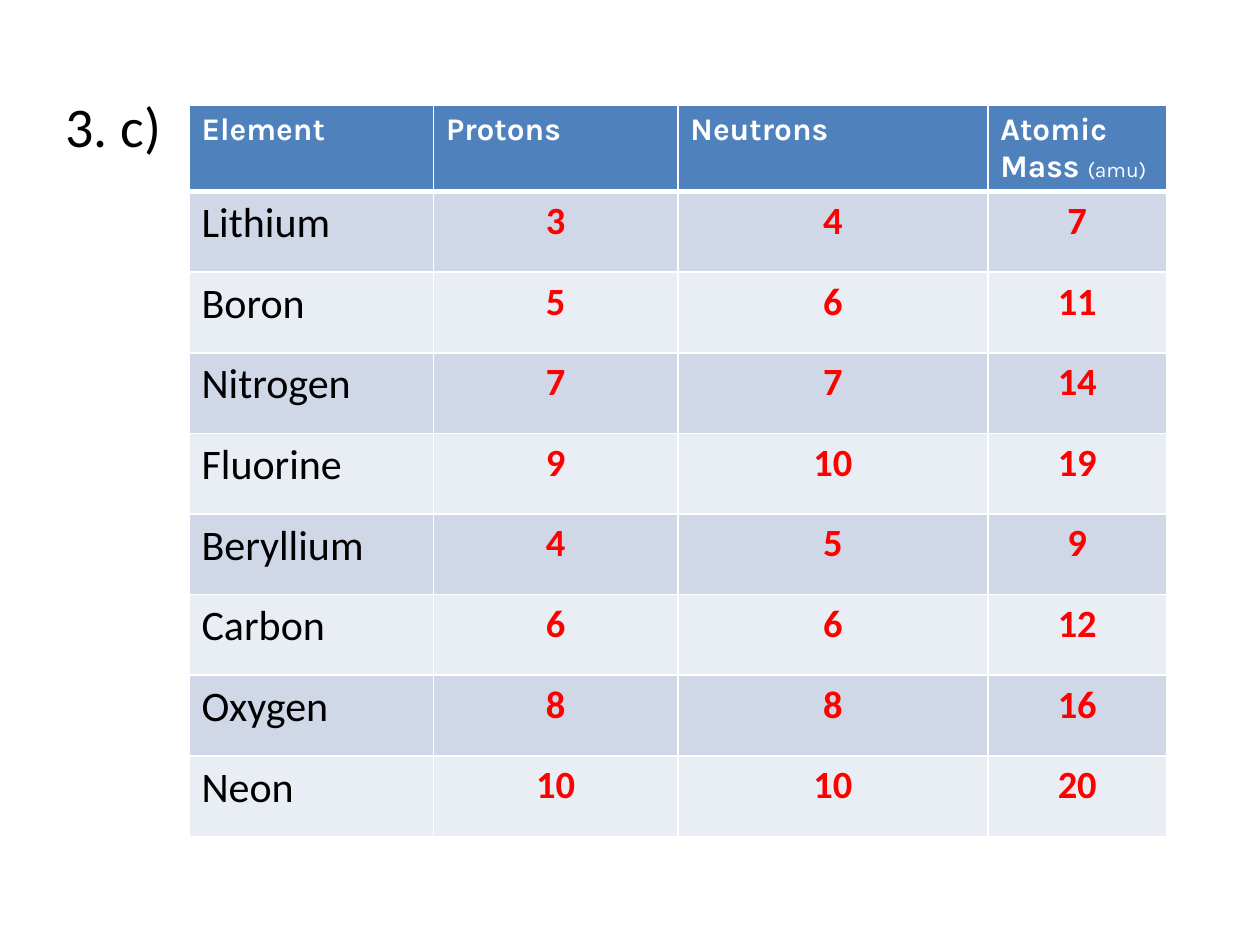
import dataclasses

import lxml.etree
import pptx
import pptx.dml.color
import pptx.enum.text
import pptx.oxml.ns
import pptx.util

WIDTH = pptx.util.Inches(10)
HEIGHT = pptx.util.Inches(7.5)
COLUMN_SHARES = (0.194, 0.194, 0.246, 0.142)
ROW_SHARE = 0.64 / 7.5
HEADER_FILL = "4F81BD"
BAND_FILLS = ("D0D8E8", "E9EDF4")
WHITE, BLACK, RED = "FFFFFF", "000000", "FF0000"


@dataclasses.dataclass(frozen=True)
class Element:
    name: str
    protons: int
    neutrons: int
    mass: int


ELEMENTS = (
    Element("Lithium", 3, 4, 7),
    Element("Boron", 5, 6, 11),
    Element("Nitrogen", 7, 7, 14),
    Element("Fluorine", 9, 10, 19),
    Element("Beryllium", 4, 5, 9),
    Element("Carbon", 6, 6, 12),
    Element("Oxygen", 8, 8, 16),
    Element("Neon", 10, 10, 20),
)


def colour(value: str) -> pptx.dml.color.RGBColor:
    return pptx.dml.color.RGBColor.from_string(value)


def write(para, text: str, *, size: float, ink: str, font: str = "Calibri",
          bold: bool = False, centred: bool = False) -> None:
    span = para.add_run()
    span.text = text
    span.font.name = font
    span.font.size = pptx.util.Pt(size)
    span.font.bold = bold
    span.font.color.rgb = colour(ink)
    if centred:
        para.alignment = pptx.enum.text.PP_ALIGN.CENTER


def style_cell(cell, fill: str, top: float = 1, bottom: float = 1) -> None:
    cell.fill.solid()
    cell.fill.fore_color.rgb = colour(fill)
    name = pptx.oxml.ns.qn
    properties = cell._tc.get_or_add_tcPr()
    widths = {"lnL": 1, "lnR": 1, "lnT": top, "lnB": bottom}
    for position, (side, width) in enumerate(widths.items()):
        line = lxml.etree.Element(name(f"a:{side}"), w=str(pptx.util.Pt(width)))
        solid = lxml.etree.SubElement(line, name("a:solidFill"))
        lxml.etree.SubElement(solid, name("a:srgbClr"), val=WHITE)
        properties.insert(position, line)


def add_label(page, text: str) -> None:
    box = page.placeholders[1]
    box.left, box.top = int(WIDTH * 0.042), int(HEIGHT * 0.09)
    box.width, box.height = int(WIDTH * 0.9), int(HEIGHT * 0.74)
    para = box.text_frame.paragraphs[0]
    properties = para._p.get_or_add_pPr()
    properties.set("marL", "0")
    properties.set("indent", "0")
    lxml.etree.SubElement(properties, pptx.oxml.ns.qn("a:buNone"))
    write(para, text, size=32, ink=BLACK)


def add_element_table(page, elements: tuple[Element, ...]) -> None:
    row_count = len(elements) + 1
    table = page.shapes.add_table(
        row_count, len(COLUMN_SHARES), int(WIDTH * 0.15), int(HEIGHT / 9),
        int(WIDTH * sum(COLUMN_SHARES)), int(HEIGHT * ROW_SHARE * row_count)).table
    table.first_row = table.horz_banding = False
    for column, share in zip(table.columns, COLUMN_SHARES):
        column.width = int(WIDTH * share)
    for row in table.rows:
        row.height = int(HEIGHT * ROW_SHARE)

    for column, heading in enumerate(("Element", "Protons", "Neutrons", "Atomic Mass ")):
        cell = table.cell(0, column)
        style_cell(cell, HEADER_FILL, bottom=3)
        write(cell.text_frame.paragraphs[0], heading,
              size=18, ink=WHITE, font="Karla", bold=True)
    write(table.cell(0, 3).text_frame.paragraphs[0], "(amu)",
          size=12, ink=WHITE, font="Karla")

    for row, element in enumerate(elements, start=1):
        for column, value in enumerate(dataclasses.astuple(element)):
            cell = table.cell(row, column)
            style_cell(cell, BAND_FILLS[(row - 1) % 2], top=3 if row == 1 else 1)
            para = cell.text_frame.paragraphs[0]
            if column == 0:
                write(para, value, size=24, ink=BLACK)
            else:
                write(para, str(value), size=22, ink=RED, bold=True, centred=True)


def main() -> None:
    deck = pptx.Presentation()
    deck.slide_width, deck.slide_height = WIDTH, HEIGHT
    page = deck.slides.add_slide(deck.slide_layouts[1])
    title = page.shapes.title.element
    title.getparent().remove(title)
    add_label(page, "3. c)")
    add_element_table(page, ELEMENTS)
    deck.save("out.pptx")


if __name__ == "__main__":
    main()
